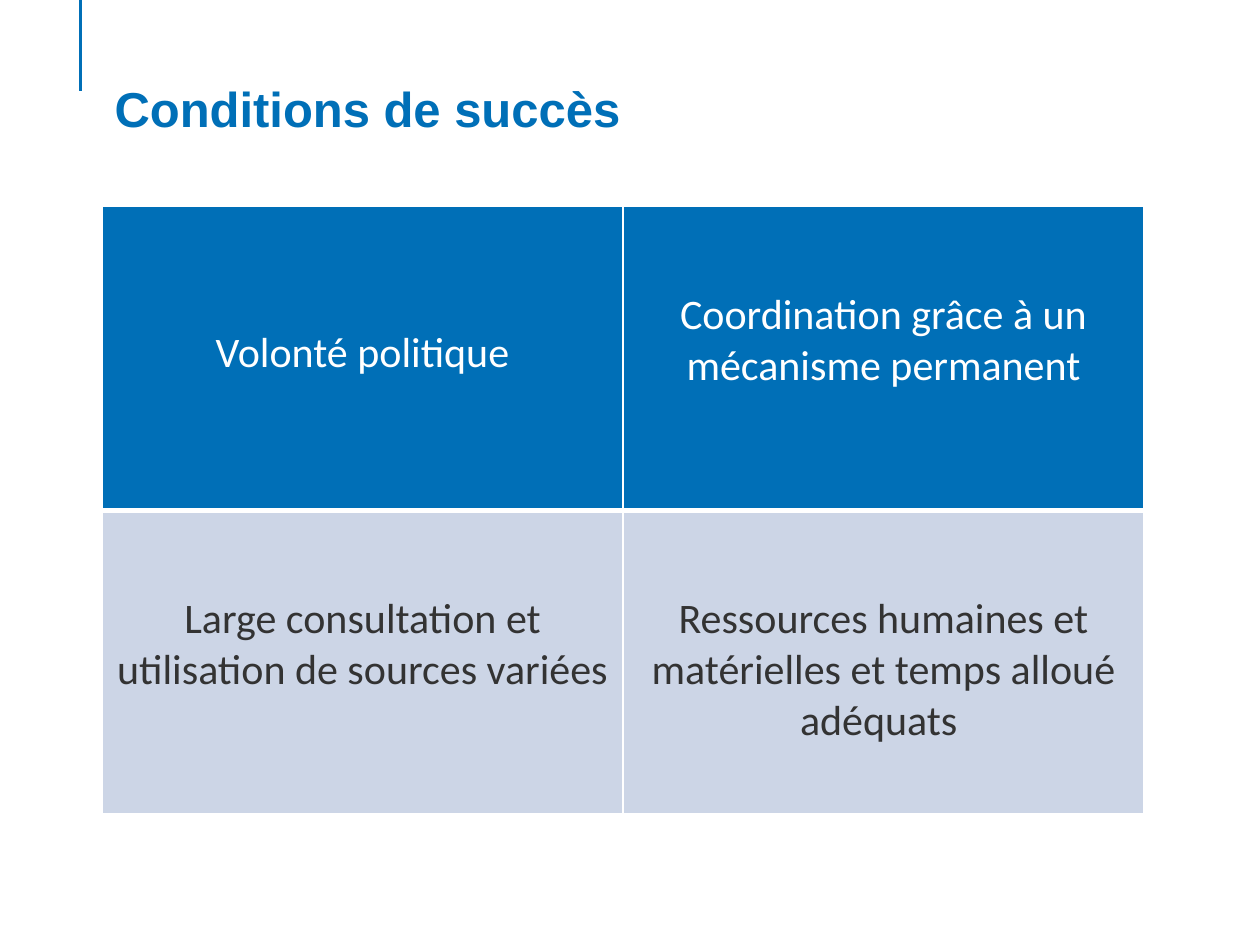
from lxml import etree
from pptx import Presentation
from pptx.dml.color import RGBColor
from pptx.enum.shapes import MSO_CONNECTOR
from pptx.enum.text import MSO_ANCHOR, PP_ALIGN
from pptx.oxml import parse_xml
from pptx.oxml.ns import nsdecls, qn
from pptx.util import Inches, Pt

BLUE = RGBColor(0x00, 0x6F, 0xB7)
PALE_BLUE = RGBColor(0xCC, 0xD5, 0xE6)
WHITE = RGBColor(0xFF, 0xFF, 0xFF)
DARK_GREY = RGBColor(0x33, 0x33, 0x33)

# Content
TITLE = "Conditions de succès"
CONDITIONS = [
    ["Volonté politique", "Coordination grâce à un mécanisme permanent"],
    ["Large consultation et utilisation de sources variées",
     "Ressources humaines et matérielles et temps alloué adéquats "],
]
ROW_STYLES = [
    {"fill": BLUE, "color": WHITE, "bottom": 3},
    {"fill": PALE_BLUE, "color": DARK_GREY, "bottom": 1},
]

# Layout, in inches
LEFT, WIDTH = 0.81, 8.27
TABLE_TOP, TABLE_HEIGHT = 1.64, 4.82
TEXT_TOP, SHORT_TEXT_TOP = 0.66, 0.96


def write(text_frame, text, *, font, size, color, bold=False, align=PP_ALIGN.LEFT):
    text_frame.word_wrap = True
    paragraph = text_frame.paragraphs[0]
    paragraph.text = text
    paragraph.alignment = align
    paragraph.font.name = font
    paragraph.font.size = Pt(size)
    paragraph.font.bold = bold
    paragraph.font.color.rgb = color


def set_borders(cell, color, bottom):
    properties = cell._tc.get_or_add_tcPr()
    widths = {"lnL": 1, "lnR": 1, "lnT": 1, "lnB": bottom}
    for position, (side, width) in enumerate(widths.items()):
        properties.insert(position, parse_xml(
            f'<a:{side} {nsdecls("a")} w="{Pt(width)}"><a:solidFill>'
            f'<a:srgbClr val="{color}"/></a:solidFill></a:{side}>'))


presentation = Presentation()
presentation.slide_width, presentation.slide_height = Inches(10), Inches(7.5)
slide = presentation.slides.add_slide(presentation.slide_layouts[5])

# Accent line
accent = slide.shapes.add_connector(
    MSO_CONNECTOR.STRAIGHT, Inches(0.64), 0, Inches(0.64), Inches(0.72))
accent.line.color.rgb = BLUE
accent.line.width = Pt(2)
etree.SubElement(accent._element.spPr, qn("a:effectLst"))

# Title
title = slide.shapes.title
title.left, title.top = Inches(LEFT), Inches(0.52)
title.width, title.height = Inches(WIDTH), Inches(0.71)
title.text_frame.vertical_anchor = MSO_ANCHOR.TOP
title.text_frame.margin_top = Inches(0.1)
write(title.text_frame, TITLE, font="Arial", size=28, color=BLUE, bold=True)

# Table of conditions
table = slide.shapes.add_table(
    len(CONDITIONS), len(CONDITIONS[0]), Inches(LEFT), Inches(TABLE_TOP),
    Inches(WIDTH), Inches(TABLE_HEIGHT)).table
for row, (texts, style) in enumerate(zip(CONDITIONS, ROW_STYLES)):
    for column, text in enumerate(texts):
        cell = table.cell(row, column)
        cell.fill.solid()
        cell.fill.fore_color.rgb = style["fill"]
        cell.vertical_anchor = MSO_ANCHOR.TOP
        # The single-line condition sits one line lower
        is_short = len(text) < 25
        cell.margin_top = Inches(SHORT_TEXT_TOP if is_short else TEXT_TOP)
        write(cell.text_frame, text, font="Calibri", size=24,
              color=style["color"], align=PP_ALIGN.CENTER)
        set_borders(cell, WHITE, style["bottom"])

presentation.save("out.pptx")
